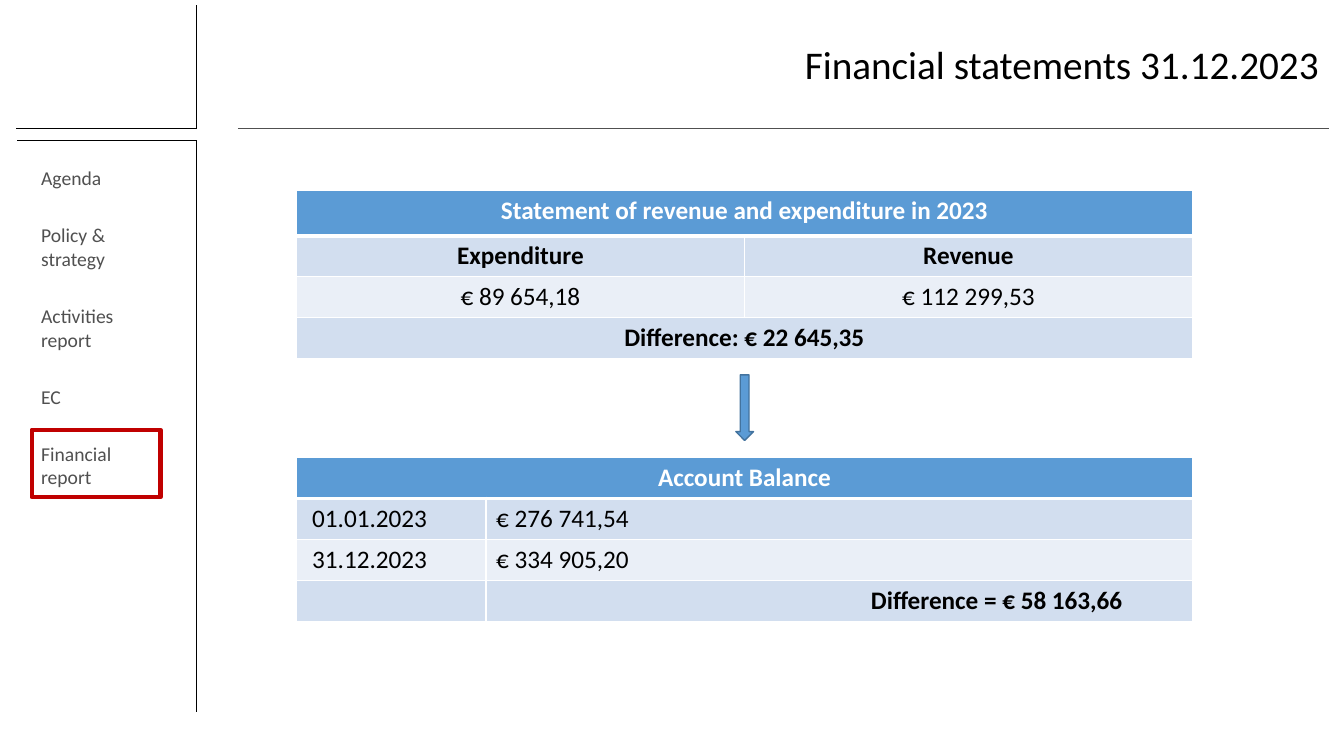
from lxml import etree
from pptx import Presentation
from pptx import util as u
from pptx.dml.color import RGBColor
from pptx.enum import shapes, text
from pptx.oxml import ns

Pt = u.Pt
COLORS = {name: RGBColor.from_string(value) for name, value in {
    "black": "000000", "white": "FFFFFF", "gray": "505050", "red": "C00000",
    "blue": "5B9BD5", "dark blue": "43739E", "band": "D2DEEF", "light band": "EAEFF7",
}.items()}
LEFT, CENTER, RIGHT = text.PP_ALIGN.LEFT, text.PP_ALIGN.CENTER, text.PP_ALIGN.RIGHT


def set_font(para, size, color, bold=False):
    para.font.name = "Calibri"
    para.font.size = Pt(size)
    para.font.bold = bold
    para.font.color.rgb = COLORS[color]


def add_grid(page, top, widths, heights, rows):
    """Add a table; each cell is (wording, alignment, bold), a lone cell spans its row."""
    frame = page.shapes.add_table(len(rows), len(widths), Pt(211.8), Pt(top),
                                  Pt(sum(widths)), Pt(sum(heights)))
    table = frame.table
    for column, width in zip(table.columns, widths):
        column.width = Pt(width)
    fills = ["blue", "band", "light band", "band"]
    for r, (height, fill, row) in enumerate(zip(heights, fills, rows)):
        table.rows[r].height = Pt(height)
        if len(row) == 1:
            table.cell(r, 0).merge(table.cell(r, len(widths) - 1))
        for c in range(len(widths)):
            cell = table.cell(r, c)
            cell.fill.solid()
            cell.fill.fore_color.rgb = COLORS[fill]
            cell.vertical_anchor = text.MSO_ANCHOR.TOP
            # White borders, thicker below the header
            for i, side in enumerate(["lnL", "lnR", "lnT", "lnB"]):
                thick = (r == 0 and side == "lnB") or (r == 1 and side == "lnT")
                border = etree.Element(ns.qn("a:" + side), w=str(Pt(3 if thick else 1)))
                paint = etree.SubElement(border, ns.qn("a:solidFill"))
                etree.SubElement(paint, ns.qn("a:srgbClr"), val=str(COLORS["white"]))
                cell._tc.get_or_add_tcPr().insert(i, border)
            para = cell.text_frame.paragraphs[0]
            if c < len(row):
                wording, alignment, bold = row[c]
                para.text = wording
                para.alignment = alignment
                set_font(para, 18, "white" if r == 0 else "black", bold)
    return table


deck = Presentation()
deck.slide_width, deck.slide_height = Pt(960), Pt(540)
page = deck.slides.add_slide(deck.slide_layouts[5])

# Frame lines
for x1, y1, x2, y2, color in [
    (140.5, 100.2, 140.5, 508.3, "black"),
    (12.2, 100.2, 140.5, 100.2, "black"),
    (11.5, 91.8, 140.5, 91.8, "black"),
    (140.5, 3.6, 140.5, 92, "black"),
    (170, 92, 949, 92, "gray"),
]:
    line = page.shapes.add_connector(shapes.MSO_CONNECTOR.STRAIGHT,
                                     Pt(x1), Pt(y1), Pt(x2), Pt(y2))
    line.line.color.rgb = COLORS[color]
    line.line.width = Pt(0.5)
    etree.SubElement(line._element.spPr, ns.qn("a:effectLst"))

# Title
title = page.shapes.title
title.left, title.top, title.width, title.height = Pt(154.8), Pt(3.6), Pt(794.2), Pt(87.8)
title.text_frame.text = "Financial statements 31.12.2023"
title.text_frame.vertical_anchor = text.MSO_ANCHOR.MIDDLE
para = title.text_frame.paragraphs[0]
para.alignment = RIGHT
para.line_spacing = 0.9
set_font(para, 28, "black")

# Side menu
menu = page.shapes.add_textbox(Pt(22.3), Pt(115.2), Pt(96.5), Pt(280.8)).text_frame
menu.word_wrap = True
for i, item in enumerate(["Agenda", "Policy & strategy", "Activities report",
                          "EC", "Financial report"]):
    para = menu.add_paragraph() if i else menu.paragraphs[0]
    para.text = item
    para.space_before = Pt(12 if i else 0)
    para.space_after = Pt(12)
    set_font(para, 14, "gray")

# Highlight of the current section
marker = page.shapes.add_shape(shapes.MSO_SHAPE.RECTANGLE,
                               Pt(22.7), Pt(307), Pt(92), Pt(48.2))
marker.shadow.inherit = False
marker.fill.background()
marker.line.color.rgb = COLORS["red"]
marker.line.width = Pt(3)

# Revenue and expenditure
add_grid(page, 136.1, [320, 320], [32.4, 29.2, 29.2, 29.2], [
    [("Statement of revenue and expenditure in 2023", CENTER, True)],
    [("Expenditure", CENTER, True), ("Revenue", CENTER, True)],
    [("€ 89 654,18", CENTER, False), ("€ 112 299,53", CENTER, False)],
    [("Difference: € 22 645,35", CENTER, True)],
])

# Account balance
balance = add_grid(page, 326.9, [135.4, 504.6], [29.2] * 4, [
    [("Account Balance", CENTER, True)],
    [("01.01.2023", LEFT, False), ("€ 276 741,54", LEFT, False)],
    [("31.12.2023", LEFT, False), ("€ 334 905,20", LEFT, False)],
    [("", LEFT, False), ("Difference = € 58 163,66", RIGHT, True)],
])
for r in (1, 2):
    balance.cell(r, 0).margin_left = Pt(11.2)
balance.cell(3, 1).margin_right = Pt(50)

# Arrow between the tables
arrow = page.shapes.add_shape(shapes.MSO_SHAPE.DOWN_ARROW,
                              Pt(525.6), Pt(267.8), Pt(12.6), Pt(46.8))
arrow.shadow.inherit = False
arrow.fill.solid()
arrow.fill.fore_color.rgb = COLORS["blue"]
arrow.line.color.rgb = COLORS["dark blue"]
arrow.line.width = Pt(1)

deck.save("out.pptx")
